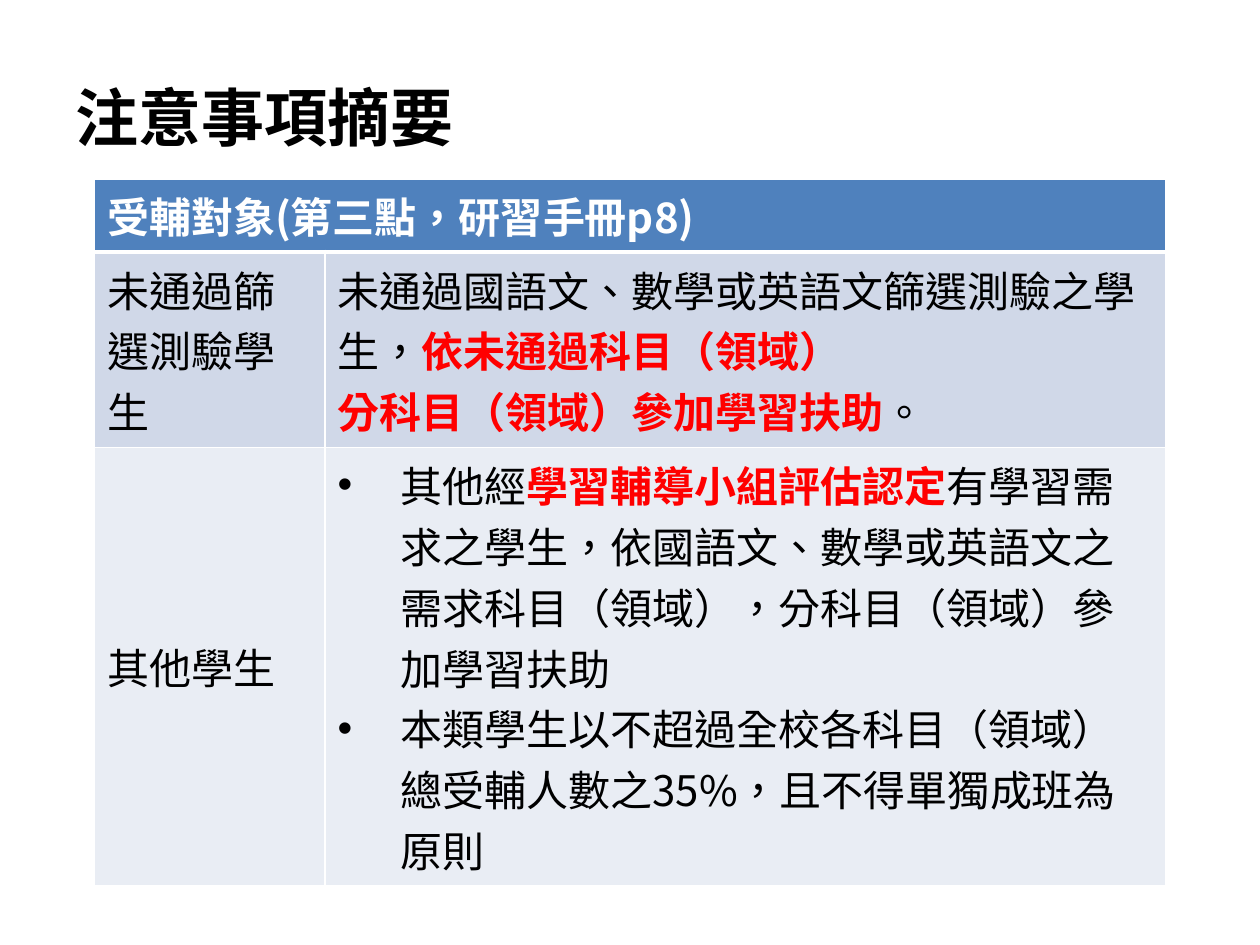
import pptx
import pptx.util
import pptx.dml.color
import pptx.enum.lang
import pptx.enum.text
import pptx.oxml
import pptx.oxml.ns
from dataclasses import dataclass

Inches, Pt = pptx.util.Inches, pptx.util.Pt
Anchor = pptx.enum.text.MSO_ANCHOR
Align = pptx.enum.text.PP_ALIGN
Lang = pptx.enum.lang.MSO_LANGUAGE_ID


@dataclass(frozen=True)
class Theme:
    font: str = "Noto Sans CJK SC"
    title: int = 36
    body: int = 24
    black: str = "000000"
    white: str = "FFFFFF"
    red: str = "FF0000"
    blue: str = "4F81BD"
    mid: str = "D0D8E8"
    pale: str = "E9EDF4"


THEME = Theme()


def color(code):
    return pptx.dml.color.RGBColor.from_string(code)


def add_xml(parent, tag, body="", attrs=""):
    space = pptx.oxml.ns.nsdecls("a")
    node = pptx.oxml.parse_xml(f"<a:{tag} {space} {attrs}>{body}</a:{tag}>")
    parent.append(node)


def add_run(para, text, size, code, bold):
    run = para.add_run()
    run.text = text
    look = {"name": THEME.font, "size": Pt(size), "bold": bold,
            "language_id": Lang.TRADITIONAL_CHINESE}
    for key, value in look.items():
        setattr(run.font, key, value)
    run.font.color.rgb = color(code)
    # East Asian glyphs take their own font entry
    add_xml(run.font._element, "ea", attrs=f'typeface="{THEME.font}"')


def add_bullet(para):
    props = para._p.get_or_add_pPr()
    props.set("marL", str(Inches(0.5)))
    props.set("indent", str(Inches(-0.5)))
    add_xml(props, "buFont", attrs='typeface="Arial"')
    add_xml(props, "buChar", attrs='char="•"')


def fill_text(frame, paras, size, bullet=False):
    for i, runs in enumerate(paras):
        para = frame.paragraphs[0] if i == 0 else frame.add_paragraph()
        para.alignment = Align.LEFT
        if bullet:
            add_bullet(para)
        for text, code, bold in runs:
            add_run(para, text, size, code, bold)


def add_edges(cell, base):
    props = cell._tc.get_or_add_tcPr()
    paint = f'<a:solidFill><a:srgbClr val="{THEME.white}"/></a:solidFill>'
    for side, width in {"L": 1, "R": 1, "T": 1, "B": base}.items():
        add_xml(props, f"ln{side}", paint, f'w="{Pt(width)}"')


def style_cell(cell, fill, anchor, base=1):
    add_edges(cell, base)
    cell.fill.solid()
    cell.fill.fore_color.rgb = color(fill)
    cell.vertical_anchor = anchor


def add_title(slide, text):
    box = slide.shapes.add_textbox(Inches(0.5), Inches(0.3), Inches(9), Inches(1.25))
    frame = box.text_frame
    for key, value in {"word_wrap": True, "vertical_anchor": Anchor.MIDDLE}.items():
        setattr(frame, key, value)
    fill_text(frame, [[(text, THEME.black, True)]], THEME.title)


def add_grid(slide, head, rows):
    widths, heights = (1.83, 6.67), (0.58, 1.55, 3.48)
    table = slide.shapes.add_table(
        len(heights), len(widths), Inches(0.75), Inches(1.42),
        Inches(sum(widths)), Inches(sum(heights))).table
    for col, width in zip(table.columns, widths):
        col.width = Inches(width)
    for row, height in zip(table.rows, heights):
        row.height = Inches(height)

    # Header across both columns
    top = table.cell(0, 0)
    for cell in table.rows[0].cells:
        style_cell(cell, THEME.blue, Anchor.TOP, base=3)
    top.merge(table.cell(0, 1))
    fill_text(top.text_frame, [[(head, THEME.white, True)]], THEME.body)

    # Label and detail of each group
    for i, (label, paras, fill, bullet) in enumerate(rows, 1):
        left, right = table.cell(i, 0), table.cell(i, 1)
        style_cell(left, fill, Anchor.MIDDLE)
        style_cell(right, fill, Anchor.TOP)
        fill_text(left.text_frame, [[plain(label)]], THEME.body)
        fill_text(right.text_frame, paras, THEME.body, bullet)


def plain(text):
    return text, THEME.black, False


def strong(text):
    return text, THEME.red, True


def main():
    deck = pptx.Presentation()
    deck.slide_width, deck.slide_height = Inches(10), Inches(7.5)
    slide = deck.slides.add_slide(deck.slide_layouts[6])

    tested = [
        [plain("未通過國語文、數學或英語文篩選測驗之學生，"),
         strong("依未通過科目（領域）")],
        [strong("分科目（領域）參加學習扶助"), plain("。")],
    ]
    others = [
        [plain("其他經"), strong("學習輔導小組評估認定"),
         plain("有學習需求之學生，依國語文、數學或英語文之需求科目（領域），"
               "分科目（領域）參加學習扶助")],
        [plain("本類學生以不超過全校各科目（領域）總受輔人數之35%，"
               "且不得單獨成班為原則")],
    ]

    add_title(slide, "注意事項摘要")
    add_grid(slide, "受輔對象(第三點，研習手冊p8)", [
        ("未通過篩選測驗學生", tested, THEME.mid, False),
        ("其他學生", others, THEME.pale, True),
    ])
    deck.save("out.pptx")


if __name__ == "__main__":
    main()
